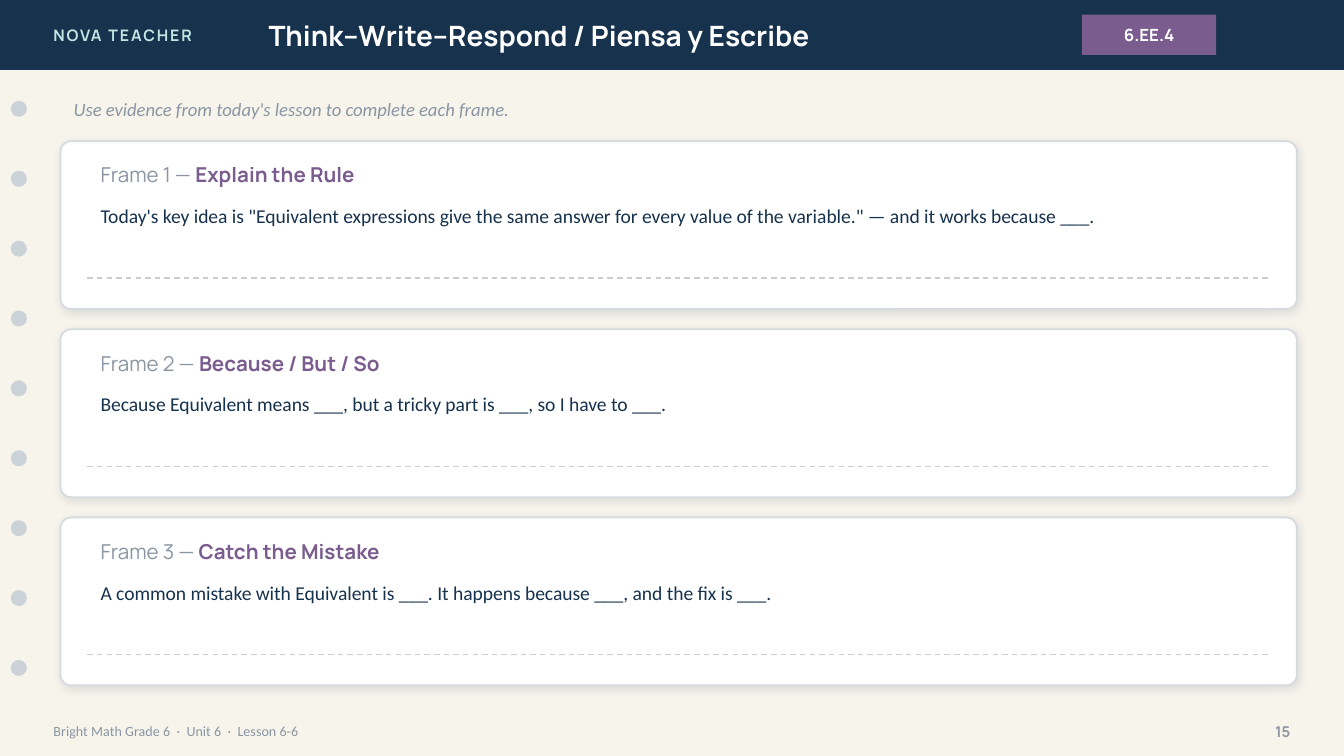
from dataclasses import dataclass

from lxml import etree
from pptx import Presentation
from pptx.dml.color import RGBColor
from pptx.enum.dml import MSO_LINE
from pptx.enum.shapes import MSO_CONNECTOR, MSO_SHAPE
from pptx.enum.text import MSO_ANCHOR, PP_ALIGN
from pptx.oxml.ns import qn
from pptx.shapes.autoshape import Shape
from pptx.slide import Slide
from pptx.util import Pt

RECT, ROUND, OVAL = MSO_SHAPE.RECTANGLE, MSO_SHAPE.ROUNDED_RECTANGLE, MSO_SHAPE.OVAL
LINE, DASH = MSO_CONNECTOR.STRAIGHT, MSO_LINE.DASH
TOP, MID = MSO_ANCHOR.TOP, MSO_ANCHOR.MIDDLE
LEFT, MIDDLE, RIGHT = PP_ALIGN.LEFT, PP_ALIGN.CENTER, PP_ALIGN.RIGHT

CREAM = RGBColor(0xF7, 0xF4, 0xEC)
NAVY = RGBColor(0x17, 0x32, 0x4D)
MINT = RGBColor(0xBF, 0xE6, 0xE2)
WHITE = RGBColor(0xFF, 0xFF, 0xFF)
PLUM = RGBColor(0x7A, 0x5C, 0x8E)
DOT = RGBColor(0xCB, 0xD3, 0xD9)
GREY = RGBColor(0x8A, 0x96, 0xA3)
EDGE = RGBColor(0xD6, 0xDB, 0xDF)
RULE = RGBColor(0xC7, 0xCD, 0xD2)
SHADE = RGBColor(0x1C, 0x2E, 0x42)

HEAD, BODY = "Manrope", "Calibri"
BAR = 37.44
CARD_X, CARD_Y, CARD_W, CARD_H, CARD_STEP = 32.4, 75.6, 662.4, 90, 100.8
TEXT_X, TEXT_W = 46.8, 633.6
DOT_X, DOT_Y, DOT_SIZE, DOT_STEP, DOT_COUNT = 5.76, 54, 8.64, BAR, 9


@dataclass(frozen=True)
class Box:
    x: float
    y: float
    w: float
    h: float


@dataclass(frozen=True)
class Run:
    text: str
    size: float
    font: str
    color: RGBColor
    bold: bool = False
    italic: bool = False
    space: float = 0


@dataclass(frozen=True)
class Frame:
    label: str
    title: str
    prompt: str


FRAMES = [
    Frame("Frame 1 — ", "Explain the Rule",
          'Today\'s key idea is "Equivalent expressions give the same answer '
          'for every value of the variable." — and it works because ___.'),
    Frame("Frame 2 — ", "Because / But / So",
          "Because Equivalent means ___, but a tricky part is ___, so I have to ___."),
    Frame("Frame 3 — ", "Catch the Mistake",
          "A common mistake with Equivalent is ___. It happens because ___, "
          "and the fix is ___."),
]


def write(shape: Shape, runs: list[Run], align: PP_ALIGN = LEFT,
          anchor: MSO_ANCHOR = MID) -> None:
    frame = shape.text_frame
    frame.word_wrap = True
    frame.vertical_anchor = anchor
    par = frame.paragraphs[0]
    par.alignment = align
    for item in runs:
        run = par.add_run()
        run.text = item.text
        font = run.font
        font.size, font.name = Pt(item.size), item.font
        font.bold, font.italic = item.bold, item.italic
        font.color.rgb = item.color
        if item.space:
            run._r.get_or_add_rPr().set("spc", str(round(item.space * 100)))


def add_text(slide: Slide, box: Box, runs: list[Run], align: PP_ALIGN = LEFT,
             anchor: MSO_ANCHOR = MID) -> None:
    shape = slide.shapes.add_textbox(Pt(box.x), Pt(box.y), Pt(box.w), Pt(box.h))
    write(shape, runs, align, anchor)


def add_fill(slide: Slide, kind: MSO_SHAPE, box: Box, color: RGBColor) -> Shape:
    """Add a plain filled shape with no outline or shadow."""
    shape = slide.shapes.add_shape(kind, Pt(box.x), Pt(box.y), Pt(box.w), Pt(box.h))
    shape.shadow.inherit = False
    shape.fill.solid()
    shape.fill.fore_color.rgb = color
    shape.line.fill.background()
    return shape


def add_shade(shape: Shape) -> None:
    """Give the shape a faint shadow straight below it."""
    effects = shape._element.spPr.find(qn("a:effectLst"))
    outer = etree.SubElement(effects, qn("a:outerShdw"), blurRad=str(Pt(4)),
                             dist=str(Pt(1)), dir="5400000", algn="bl",
                             rotWithShape="0")
    color = etree.SubElement(outer, qn("a:srgbClr"), val=str(SHADE))
    etree.SubElement(color, qn("a:alpha"), val="10000")


def add_rule(slide: Slide, y: float) -> None:
    rule = slide.shapes.add_connector(LINE, Pt(TEXT_X), Pt(y),
                                      Pt(TEXT_X + TEXT_W), Pt(y))
    rule.line.color.rgb = RULE
    rule.line.width = Pt(0.75)
    rule.line.dash_style = DASH
    etree.SubElement(rule._element.spPr, qn("a:effectLst"))


def add_card(slide: Slide, y: float, frame: Frame) -> None:
    card = add_fill(slide, ROUND, Box(CARD_X, y, CARD_W, CARD_H), WHITE)
    card.adjustments[0] = 0.064
    card.line.color.rgb = EDGE
    card.line.width = Pt(1)
    add_shade(card)
    add_text(slide, Box(TEXT_X, y + 7.2, TEXT_W, 21.6),
             [Run(frame.label, 11, HEAD, GREY),
              Run(frame.title, 11, HEAD, PLUM, bold=True)])
    add_text(slide, Box(TEXT_X, y + 30.24, TEXT_W, 28.8),
             [Run(frame.prompt, 10.5, BODY, NAVY)], anchor=TOP)
    add_rule(slide, y + 73.44)


def add_header(slide: Slide) -> None:
    add_fill(slide, RECT, Box(0, 0, 720, BAR), NAVY)
    add_text(slide, Box(21.6, 0, 172.8, BAR),
             [Run("NOVA TEACHER", 8.5, HEAD, MINT, bold=True, space=1)])
    add_text(slide, Box(136.8, 0, 403.2, BAR),
             [Run("Think–Write–Respond / Piensa y Escribe", 15, HEAD, WHITE, bold=True)])
    badge = add_fill(slide, RECT, Box(579.6, 7.92, 72, 21.6), PLUM)
    write(badge, [Run("6.EE.4", 9, HEAD, WHITE, bold=True)], MIDDLE)


def add_footer(slide: Slide) -> None:
    add_text(slide, Box(21.6, 381.6, 504, 20.16),
             [Run("Bright Math Grade 6  ·  Unit 6  ·  Lesson 6-6", 7.5, BODY, GREY)])
    add_text(slide, Box(662.4, 381.6, 36, 20.16),
             [Run("15", 8, HEAD, GREY, bold=True)], RIGHT)


def main() -> None:
    deck = Presentation()
    deck.slide_width, deck.slide_height = Pt(720), Pt(405)
    slide = deck.slides.add_slide(deck.slide_layouts[6])
    slide.background.fill.solid()
    slide.background.fill.fore_color.rgb = CREAM

    add_header(slide)
    for i in range(DOT_COUNT):
        add_fill(slide, OVAL, Box(DOT_X, DOT_Y + i * DOT_STEP, DOT_SIZE, DOT_SIZE), DOT)
    add_footer(slide)
    add_text(slide, Box(CARD_X, 47.52, CARD_W, 21.6),
             [Run("Use evidence from today's lesson to complete each frame.",
                  10, BODY, GREY, italic=True)])
    for i, frame in enumerate(FRAMES):
        add_card(slide, CARD_Y + i * CARD_STEP, frame)
    deck.save("out.pptx")


if __name__ == "__main__":
    main()
